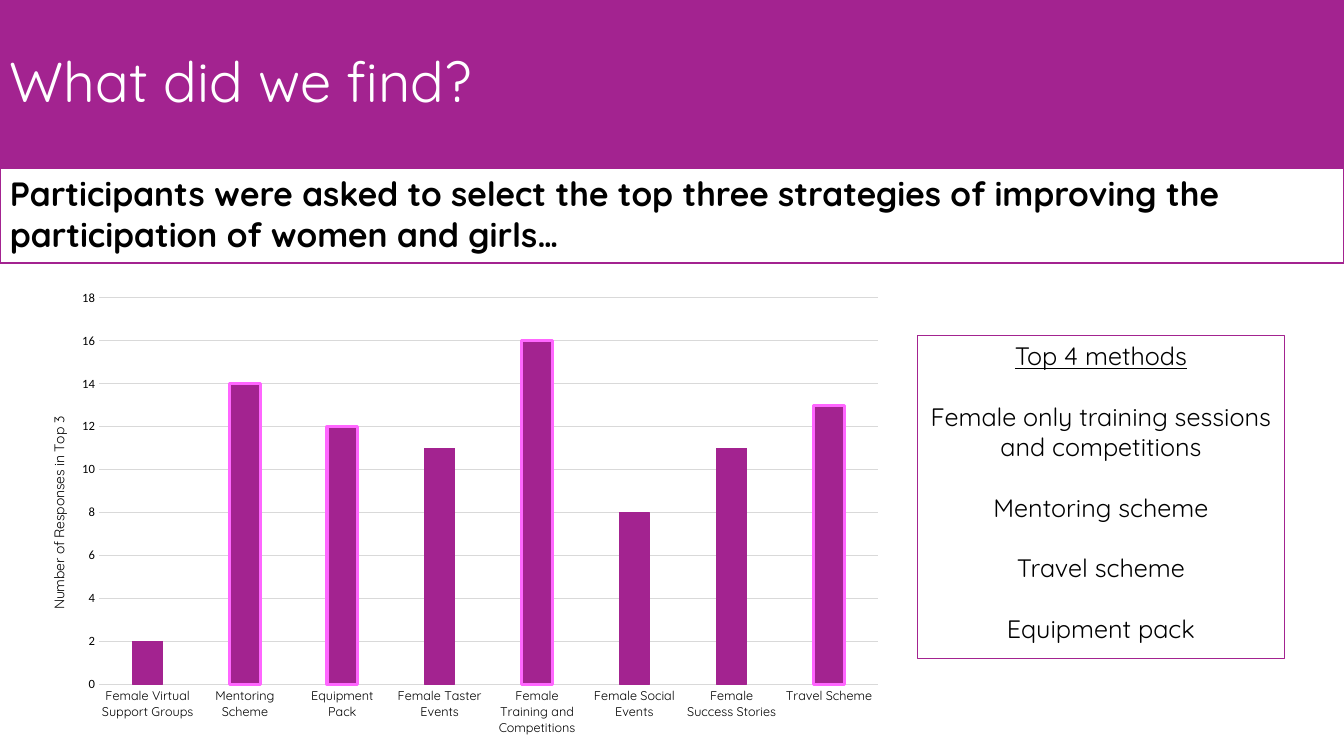
from lxml import etree
from pptx import Presentation
from pptx.chart.data import CategoryChartData
from pptx.dml.color import RGBColor
from pptx.enum.chart import XL_CHART_TYPE as ChartType, XL_TICK_MARK as TickMark
from pptx.enum.shapes import MSO_SHAPE as Shape
from pptx.enum.text import MSO_ANCHOR as Anchor, PP_ALIGN as Align
from pptx.oxml import parse_xml
from pptx.oxml.ns import nsdecls, qn
from pptx.util import Cm, Pt

PURPLE, PINK, GREY, BLACK, WHITE = "A32390", "FF66FF", "D9D9D9", "000000", "FFFFFF"


def paint(target, color):
    """Give a fill, or the fill of a line, one solid colour."""
    target.solid()
    target.fore_color.rgb = RGBColor.from_string(color)


def add_panel(left, top, width, height, fill, lines, size, color, align=Align.LEFT):
    """Add a rectangle with one paragraph for each line of text."""
    panel = page.shapes.add_shape(
        Shape.RECTANGLE, Cm(left), Cm(top), Cm(width), Cm(height))
    panel.shadow.inherit = False
    paint(panel.fill, fill)
    paint(panel.line.fill, PURPLE)
    panel.line.width = Pt(1)
    frame = panel.text_frame
    frame.word_wrap = True
    frame.vertical_anchor = Anchor.TOP
    frame.text = "\n".join(lines)
    for para in frame.paragraphs:
        para.alignment = align
        font = para.runs[0].font
        font.name, font.size = "Quicksand", Pt(size)
        font.color.rgb = RGBColor.from_string(color)
    return panel


deck = Presentation()
deck.slide_width, deck.slide_height = Cm(33.87), Cm(19.05)
page = deck.slides.add_slide(deck.slide_layouts[6])

# Top methods
methods = add_panel(
    23.12, 8.46, 9.25, 8.13, WHITE,
    ["Top 4 methods", "Female only training sessions and competitions",
     "Mentoring scheme", "Travel scheme", "Equipment pack"],
    18, BLACK, Align.CENTER)
heading, *entries = methods.text_frame.paragraphs
heading.runs[0].font.underline = True
for entry in entries:
    entry.space_before = Pt(21.6)

# Chart of responses
responses = {
    "Female Virtual Support Groups": 2,
    "Mentoring Scheme": 14,
    "Equipment Pack": 12,
    "Female Taster Events": 11,
    "Female Training and Competitions": 16,
    "Female Social Events": 8,
    "Female Success Stories": 11,
    "Travel Scheme": 13,
}
data = CategoryChartData()
data.categories = list(responses)
data.add_series("Series 1", list(responses.values()))
chart = page.shapes.add_chart(
    ChartType.COLUMN_CLUSTERED, Cm(0.51), Cm(7.04), Cm(22.05), Cm(11.73), data).chart
chart.has_legend = False
chart.has_title = False
chart.font.name, chart.font.size = "Calibri", Pt(10)
chart.font.color.rgb = RGBColor.from_string(BLACK)

plot = chart.plots[0]
plot.vary_by_categories = False
plot.gap_width, plot.overlap = 219, -27
columns = plot.series[0]
paint(columns.format.fill, PURPLE)
paint(columns.format.line.fill, PURPLE)
columns.format.line.width = Pt(0.75)
top_four = sorted(responses.values())[-4:]
for index, count in enumerate(responses.values()):
    if count in top_four:
        column = columns.points[index].format
        paint(column.fill, PURPLE)
        paint(column.line.fill, PINK)
        column.line.width = Pt(2.25)

strategies, counts = chart.category_axis, chart.value_axis
for axis, font_name in ((strategies, "Quicksand"), (counts, "Calibri")):
    axis.major_tick_mark = axis.minor_tick_mark = TickMark.NONE
    font = axis.tick_labels.font
    font.name, font.size = font_name, Pt(9)
    font.color.rgb = RGBColor.from_string(BLACK)
counts.minimum_scale, counts.maximum_scale, counts.major_unit = 0, 18, 2
counts.format.line.fill.background()
for line in (strategies.format.line, counts.major_gridlines.format.line):
    paint(line.fill, GREY)
    line.width = Pt(0.75)

title = counts.axis_title.text_frame
title.text = "Number of Responses in Top 3"
font = title.paragraphs[0].runs[0].font
font.name, font.size, font.bold = "Quicksand", Pt(10), False
font.color.rgb = RGBColor.from_string(BLACK)
title._txBody.find(qn("a:bodyPr")).set("rot", "-5400000")

# Fixed places, as shares of the chart, for the plot area and the axis title
plot_area = chart._chartSpace.chart.plotArea
axis_title = counts.axis_title._element
for owner, position, target, shares in (
        (plot_area, 0, "inner", {"x": 0.09, "y": 0.04, "w": 0.89, "h": 0.83}),
        (axis_title, 1, None, {"x": 0.03, "y": 0.29})):
    for previous in owner.findall(qn("c:layout")):
        owner.remove(previous)
    layout = parse_xml(f"<c:layout {nsdecls('c')}><c:manualLayout/></c:layout>")
    settings = [("layoutTarget", target)] if target else []
    settings += [(f"{name}Mode", "edge") for name in "xy"]
    settings += list(shares.items())
    for name, value in settings:
        etree.SubElement(layout[0], qn(f"c:{name}")).set("val", str(value))
    owner.insert(position, layout)

# Question and title bands
question = add_panel(
    0, 4.24, 33.87, 2.39, WHITE,
    ["Participants were asked to select the top three strategies of improving "
     "the participation of women and girls…"], 24, BLACK)
question.text_frame.paragraphs[0].runs[0].font.bold = True

banner = add_panel(0, 0, 33.87, 4.24, PURPLE, ["What did we find?"], 40, WHITE)
banner.line.fill.background()
banner.text_frame.vertical_anchor = Anchor.MIDDLE
banner.text_frame.paragraphs[0].line_spacing = 0.9

deck.save("out.pptx")
